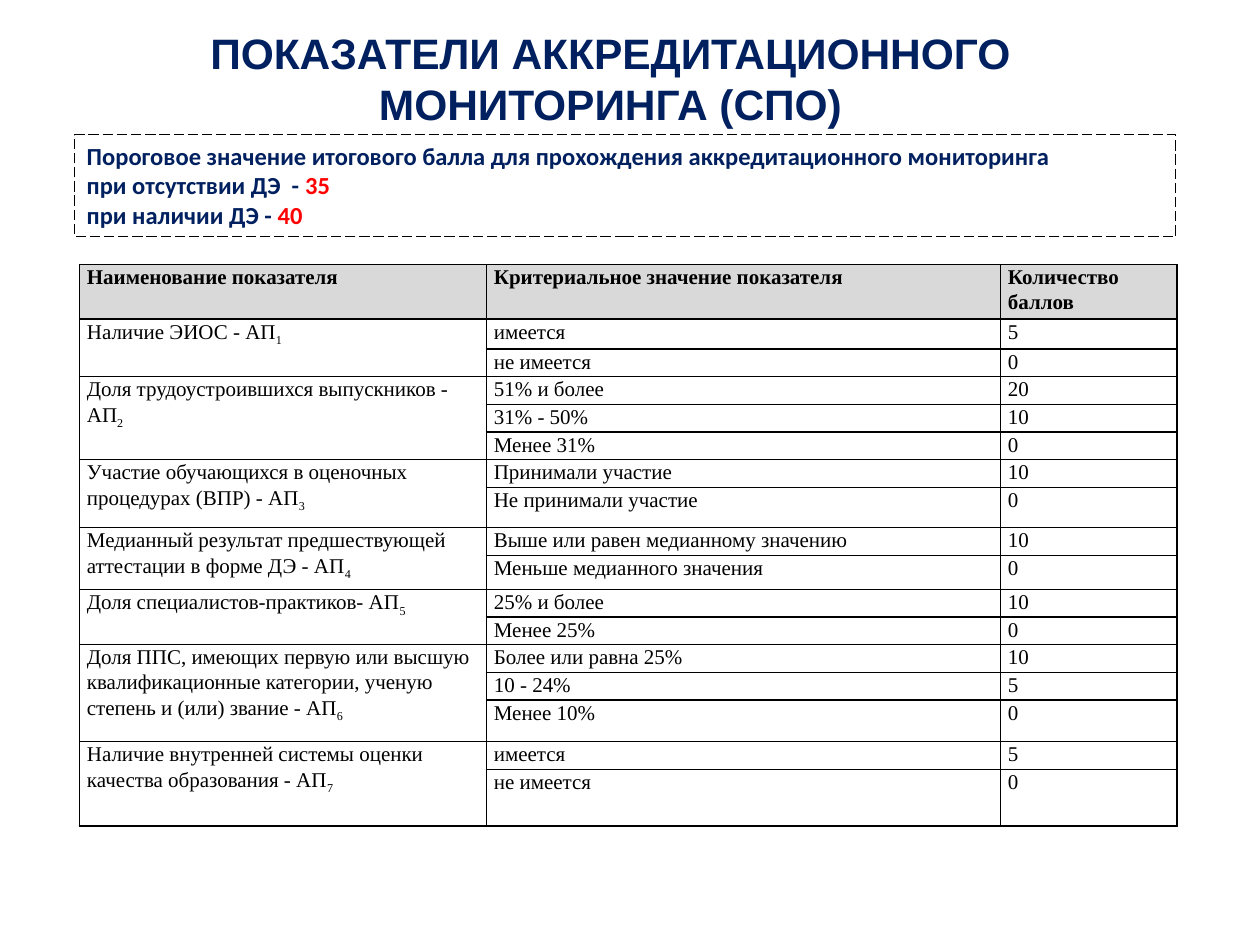
from lxml.etree import SubElement
from pptx import Presentation
from pptx.dml.color import RGBColor
from pptx.enum.dml import MSO_LINE
from pptx.enum.shapes import MSO_SHAPE
from pptx.enum.text import MSO_ANCHOR, MSO_AUTO_SIZE, PP_ALIGN
from pptx.oxml.ns import qn
from pptx.util import Inches, Pt

NAVY, RED, BLACK, GREY = "002060", "FF0000", "000000", "D9D9D9"

HEADERS = ["Наименование показателя", "Критериальное значение показателя", "Количество баллов"]
INDICATORS = [
    ("Наличие ЭИОС - АП", [("имеется", 5), ("не имеется", 0)]),
    ("Доля трудоустроившихся выпускников - АП",
     [("51% и более", 20), ("31% - 50%", 10), ("Менее 31%", 0)]),
    ("Участие обучающихся в оценочных процедурах (ВПР) - АП",
     [("Принимали участие", 10), ("Не принимали участие", 0)]),
    ("Медианный результат предшествующей аттестации в форме ДЭ - АП",
     [("Выше или равен медианному значению", 10), ("Меньше медианного значения", 0)]),
    ("Доля специалистов-практиков- АП", [("25% и более", 10), ("Менее 25%", 0)]),
    ("Доля ППС, имеющих первую или высшую квалификационные категории, "
     "ученую степень и (или) звание - АП",
     [("Более или равна 25%", 10), ("10 - 24%", 5), ("Менее 10%", 0)]),
    ("Наличие внутренней системы оценки качества образования - АП",
     [("имеется", 5), ("не имеется", 0)]),
]
COL_WIDTHS = [3.23, 4.08, 1.4]
ROW_HEIGHT = 0.22
TALL_ROWS = {0: 0.43, 1: 0.24, 7: 0.32, 9: 0.27, 14: 0.33, 16: 0.45}
THRESHOLDS = [
    [("Пороговое значение итогового балла для прохождения аккредитационного мониторинга", NAVY)],
    [("при отсутствии ДЭ  - ", NAVY), ("35", RED)],
    [("при наличии ДЭ - ", NAVY), ("40", RED)],
]


def rgb(value):
    return RGBColor.from_string(value)


class SlideBuilder:
    title_font, box_font, table_font = "Arial", "Calibri", "Times New Roman"

    def __init__(self, slide):
        self.s = slide

    def style(self, r, font, size, color, bold=False):
        r.font.name, r.font.size, r.font.bold = font, Pt(size), bold
        r.font.color.rgb = rgb(color)

    def title(self, text, left, top, width, height):
        sp = self.s.shapes.title
        sp.left, sp.top, sp.width, sp.height = map(Inches, (left, top, width, height))
        tf = sp.text_frame
        tf.text = text
        tf.auto_size = MSO_AUTO_SIZE.NONE
        tf.vertical_anchor = MSO_ANCHOR.MIDDLE
        p = tf.paragraphs[0]
        p.alignment = PP_ALIGN.CENTER
        self.style(p.runs[0], self.title_font, 24.3, NAVY, True)

    def dashed_box(self, lines, left, top, width, height):
        sp = self.s.shapes.add_shape(
            MSO_SHAPE.RECTANGLE, *map(Inches, (left, top, width, height)))
        sp.shadow.inherit = False
        sp.fill.background()
        sp.line.color.rgb = rgb(BLACK)
        sp.line.width = Pt(0.75)
        sp.line.dash_style = MSO_LINE.LONG_DASH
        tf = sp.text_frame
        tf.word_wrap = True
        tf.auto_size = MSO_AUTO_SIZE.SHAPE_TO_FIT_TEXT
        tf.vertical_anchor = MSO_ANCHOR.TOP
        for i, line in enumerate(lines):
            p = tf.add_paragraph() if i else tf.paragraphs[0]
            p.alignment = PP_ALIGN.LEFT
            for text, color in line:
                r = p.add_run()
                r.text = text
                self.style(r, self.box_font, 14, color, True)

    def table(self, left, top, widths, heights):
        frame = self.s.shapes.add_table(
            len(heights), len(widths), Inches(left), Inches(top),
            Inches(sum(widths)), Inches(sum(heights)))
        table = frame.table
        table.first_row = table.horz_banding = False
        for column, width in zip(table.columns, widths):
            column.width = Inches(width)
        for row, height in zip(table.rows, heights):
            row.height = Inches(height)
        for cell in table.iter_cells():
            cell.margin_left = cell.margin_right = Inches(0.06)
            cell.margin_top = cell.margin_bottom = 0
            self.borders(cell)
            cell.fill.background()
        return table

    def borders(self, cell):
        tc_pr = cell._tc.get_or_add_tcPr()
        for side in ("a:lnL", "a:lnR", "a:lnT", "a:lnB"):
            ln = SubElement(tc_pr, qn(side), w=str(Pt(1)))
            fill = SubElement(ln, qn("a:solidFill"))
            SubElement(fill, qn("a:srgbClr"), val=BLACK)

    def cell_text(self, cell, text, subscript=None, bold=False):
        p = cell.text_frame.paragraphs[0]
        p.text = text
        p.line_spacing = 1.07
        if subscript is not None:
            r = p.add_run()
            r.text = str(subscript)
            r.font._element.set("baseline", "-25000")
        for r in p.runs:
            self.style(r, self.table_font, 12, BLACK, bold)


def main():
    prs = Presentation()
    prs.slide_width, prs.slide_height = Inches(10), Inches(7.5)
    b = SlideBuilder(prs.slides.add_slide(prs.slide_layouts[5]))

    b.title("ПОКАЗАТЕЛИ АККРЕДИТАЦИОННОГО МОНИТОРИНГА (СПО)", 0.28, 0.33, 9.13, 0.58)

    row_count = 1 + sum(len(criteria) for _, criteria in INDICATORS)
    heights = [TALL_ROWS.get(i, ROW_HEIGHT) for i in range(row_count)]
    table = b.table(0.63, 2.1, COL_WIDTHS, heights)
    for col, header in enumerate(HEADERS):
        cell = table.cell(0, col)
        b.cell_text(cell, header, bold=True)
        cell.fill.solid()
        cell.fill.fore_color.rgb = rgb(GREY)
    row = 1
    for number, (name, criteria) in enumerate(INDICATORS, 1):
        table.cell(row, 0).merge(table.cell(row + len(criteria) - 1, 0))
        b.cell_text(table.cell(row, 0), name, subscript=number)
        for criterion, points in criteria:
            b.cell_text(table.cell(row, 1), criterion)
            b.cell_text(table.cell(row, 2), str(points))
            row += 1

    b.dashed_box(THRESHOLDS, 0.59, 1.07, 8.74, 0.81)
    prs.save("out.pptx")


if __name__ == "__main__":
    main()
